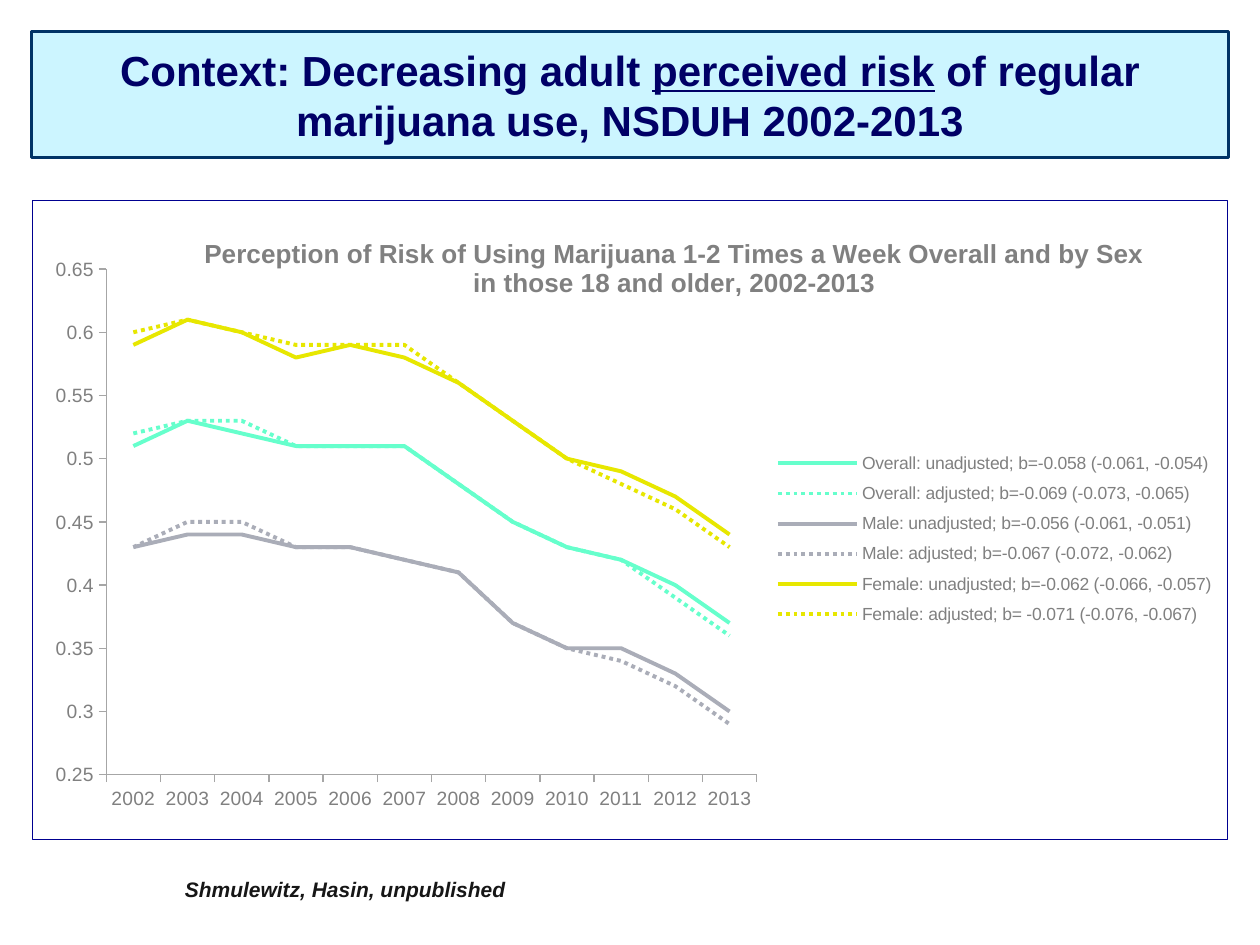
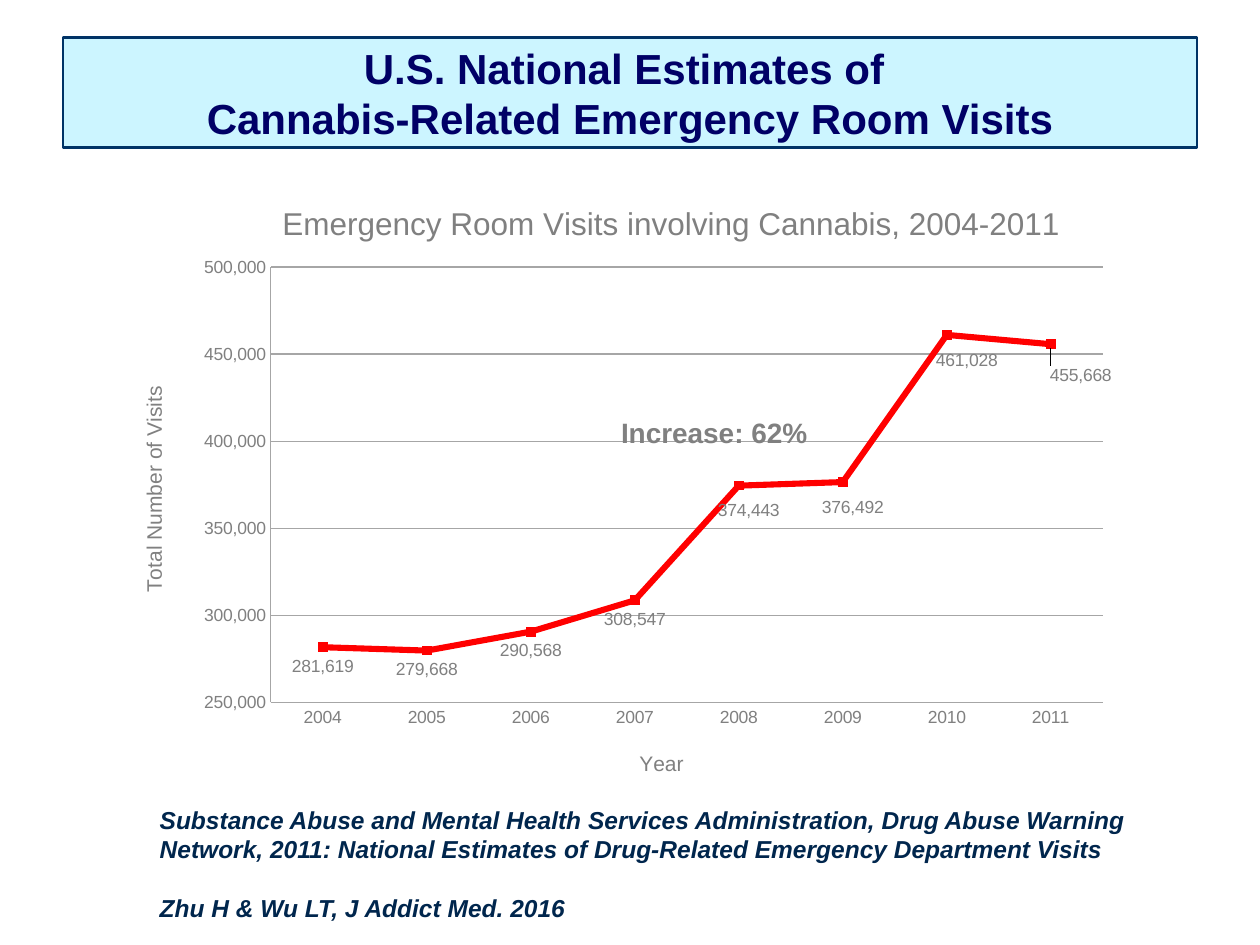
"""Build two slides on cannabis risk perception and emergency room visits."""
from lxml import etree
from pptx import Presentation
from pptx.chart.data import CategoryChartData
from pptx.dml.color import RGBColor
from pptx.enum import chart as ch, dml, text
from pptx.oxml import parse_xml
from pptx.oxml.ns import nsdecls, qn
from pptx.util import Pt

FONT = "Arial"
NAVY, EDGE, BAND = "000066", "003366", "CCF5FF"
GREY, AXIS, WHITE, RED = "808080", "A6A6A6", "FFFFFF", "FF0000"
MINT, STEEL, GOLD = "66FFCC", "AAADB8", "E7E700"

RISK = {
    "head": [("Context: Decreasing adult ", False), ("perceived risk", True),
             (" of regular marijuana use, NSDUH 2002-2013", False)],
    "band": (18, 18, 684, 72),
    "box": (18, 114, 684, 366),
    "title": "Perception of Risk of Using Marijuana 1-2 Times a Week "
             "Overall and by Sex in those 18 and older, 2002-2013",
    "years": range(2002, 2014),
    "lines": [
        ("Overall: unadjusted; b=-0.058 (-0.061, -0.054)", MINT,
         [.51, .53, .52, .51, .51, .51, .48, .45, .43, .42, .40, .37]),
        ("Overall: adjusted; b=-0.069 (-0.073, -0.065)", MINT,
         [.52, .53, .53, .51, .51, .51, .48, .45, .43, .42, .39, .36]),
        ("Male: unadjusted; b=-0.056 (-0.061, -0.051)", STEEL,
         [.43, .44, .44, .43, .43, .42, .41, .37, .35, .35, .33, .30]),
        ("Male: adjusted; b=-0.067 (-0.072, -0.062)", STEEL,
         [.43, .45, .45, .43, .43, .42, .41, .37, .35, .34, .32, .29]),
        ("Female: unadjusted; b=-0.062 (-0.066, -0.057)", GOLD,
         [.59, .61, .60, .58, .59, .58, .56, .53, .50, .49, .47, .44]),
        ("Female: adjusted; b= -0.071 (-0.076, -0.067)", GOLD,
         [.60, .61, .60, .59, .59, .59, .56, .53, .50, .48, .46, .43]),
    ],
    "note": ["Shmulewitz, Hasin, unpublished"],
}
VISITS = {
    "head": [("U.S. National Estimates of \vCannabis-Related Emergency Room Visits",
              False)],
    "band": (36, 21.6, 648, 62.6),
    "box": (72.7, 102.2, 569.5, 352.8),
    "title": "Emergency Room Visits involving Cannabis, 2004-2011",
    "years": range(2004, 2012),
    "lines": [("Series 1", RED, [281619, 279668, 290568, 308547,
                                 374443, 376492, 461028, 455668])],
    "shifts": {4: (.01, .01), 5: (.01, .01), 6: (.02, .01), 7: (.03, .02)},
    "note": ["Substance Abuse and Mental Health Services Administration, "
             "Drug Abuse Warning Network, 2011: National Estimates of "
             "Drug-Related Emergency Department Visits",
             "Zhu H & Wu LT, J Addict Med. 2016"],
    "rise": ["Increase: 62%"],
}


def rgb(code):
    """Turn a hex string into a colour."""
    return RGBColor.from_string(code)


def style(font, size, color, bold=False, slant=False):
    """Format one font."""
    font.name, font.size = FONT, Pt(size)
    font.bold, font.italic = bold, slant
    font.color.rgb = rgb(color)


def stroke(line, color, width):
    """Colour a line and set its width."""
    line.color.rgb = rgb(color)
    line.width = Pt(width)


def head(deck, data):
    """Add a slide with its title band."""
    slide = deck.slides.add_slide(deck.slide_layouts[5])
    band = slide.shapes.title
    band.left, band.top, band.width, band.height = map(Pt, data["band"])
    band.fill.solid()
    band.fill.fore_color.rgb = rgb(BAND)
    stroke(band.line, EDGE, 1.5)
    frame = band.text_frame
    frame.auto_size = text.MSO_AUTO_SIZE.NONE
    frame.vertical_anchor = text.MSO_ANCHOR.MIDDLE
    para = frame.paragraphs[0]
    para.text = data["head"][0][0]
    for words, _ in data["head"][1:]:
        para.add_run().text = words
    para.alignment = text.PP_ALIGN.CENTER
    for run in para.runs:
        style(run.font, 24, NAVY, True)
        run.font.underline = (run.text, True) in data["head"]
    return slide


def label(slide, box, lines, size, color, slant=False, wrap=False, gap=0):
    """Add a bold text box, one paragraph per line."""
    frame = slide.shapes.add_textbox(*map(Pt, box)).text_frame
    frame.word_wrap = wrap
    frame.auto_size = text.MSO_AUTO_SIZE.SHAPE_TO_FIT_TEXT
    frame.text = "\n".join(lines)
    for spot, para in enumerate(frame.paragraphs):
        if spot:
            para.space_before = Pt(gap)
        for run in para.runs:
            style(run.font, size, color, True, slant)


def place(node, slot, inner=False, **sides):
    """Give a chart part a manual layout at a child index."""
    for old in node.findall(qn("c:layout")):
        node.remove(old)
    lay = parse_xml(f"<c:layout {nsdecls('c')}><c:manualLayout/></c:layout>")
    facts = {"layoutTarget": "inner"} if inner else {}
    if node.tag != qn("c:dLbl"):
        facts.update(xMode="edge", yMode="edge")
    for key, val in {**facts, **sides}.items():
        etree.SubElement(lay[0], qn("c:" + key)).set("val", str(val))
    node.insert(slot, lay)


def paint(chart, border=None):
    """Fill the chart area white and draw its border."""
    line = (f'<a:ln w="9525"><a:solidFill><a:srgbClr val="{border}"/></a:solidFill></a:ln>'
            if border else "<a:ln><a:noFill/></a:ln>")
    chart.element.find(qn("c:txPr")).addprevious(parse_xml(
        f"<c:spPr {nsdecls('c', 'a')}><a:solidFill>"
        f'<a:srgbClr val="{WHITE}"/></a:solidFill>{line}</c:spPr>'))


def caption(part, words, size, bold=False):
    """Write a chart or axis title."""
    part.text_frame.text = words
    style(part.text_frame.paragraphs[0].runs[0].font, size, GREY, bold)


def plot(slide, data, kind, size, width, form, span, tick):
    """Add a line chart and style its title, axes and lines."""
    table = CategoryChartData(number_format=form)
    table.categories = [str(year) for year in data["years"]]
    for name, _, vals in data["lines"]:
        table.add_series(name, vals)
    chart = slide.shapes.add_chart(kind, *map(Pt, data["box"]), table).chart
    style(chart.font, size, GREY)
    chart.has_legend = False
    chart.has_title = True
    chart.plots[0].vary_by_categories = False
    axis = chart.value_axis
    axis.minimum_scale, axis.maximum_scale, axis.major_unit = span
    axis.has_major_gridlines = False
    axis.tick_labels.number_format = form
    axis.tick_labels.number_format_is_linked = False
    for side in (axis, chart.category_axis):
        side.major_tick_mark = tick
        side.minor_tick_mark = ch.XL_TICK_MARK.NONE
        stroke(side.format.line, AXIS, .75)
        style(side.tick_labels.font, size, GREY)
    for line, (name, color, _) in zip(chart.plots[0].series, data["lines"]):
        line.smooth = False
        stroke(line.format.line, color, width)
        if ": adjusted" in name:
            line.format.line.dash_style = dml.MSO_LINE.ROUND_DOT
    return chart


def risk(deck):
    """Build the slide on perceived risk."""
    slide = head(deck, RISK)
    chart = plot(slide, RISK, ch.XL_CHART_TYPE.LINE, 11, 2.25, "General",
                 (.25, .65, .05), ch.XL_TICK_MARK.OUTSIDE)
    caption(chart.chart_title, RISK["title"], 14.9, True)
    chart.has_legend = True
    chart.legend.position = ch.XL_LEGEND_POSITION.RIGHT
    chart.legend.include_in_layout = False
    style(chart.legend.font, 10, GREY)
    root = chart.element
    place(next(root.iter(qn("c:title"))), 1, x=.14, y=.05)
    place(next(root.iter(qn("c:legend"))), 1, x=.62, y=.38, w=.37, h=.3)
    place(next(root.iter(qn("c:plotArea"))), 0, True, x=.062, y=.108, w=.544, h=.791)
    paint(chart, "000090")
    label(slide, (98.6, 497.5, 200, 21.6), RISK["note"], 12, "161616", True)


def visits(deck):
    """Build the slide on emergency room visits."""
    slide = head(deck, VISITS)
    label(slide, (84.2, 456.5, 576, 77.8), VISITS["note"], 14, "00264D",
          True, True, 16.8)
    chart = plot(slide, VISITS, ch.XL_CHART_TYPE.LINE_MARKERS, 10, 3.5, "#,##0",
                 (250000, 500000, 50000), ch.XL_TICK_MARK.NONE)
    caption(chart.chart_title, VISITS["title"], 18)
    caption(chart.category_axis.axis_title, "Year", 12)
    caption(chart.value_axis.axis_title, "Total Number of Visits", 12)
    chart.value_axis.has_major_gridlines = True
    stroke(chart.value_axis.major_gridlines.format.line, AXIS, .75)
    line = chart.plots[0].series[0]
    mark = line.marker
    mark.style, mark.size = ch.XL_MARKER_STYLE.SQUARE, 5
    mark.format.fill.solid()
    mark.format.fill.fore_color.rgb = rgb(RED)
    stroke(mark.format.line, RED, .75)
    tags = line.data_labels
    tags.show_value = True
    tags.position = ch.XL_LABEL_POSITION.BELOW
    style(tags.font, 10, GREY)
    for spot in VISITS["shifts"]:
        tag = line.points[spot].data_label
        tag.position = ch.XL_LABEL_POSITION.BELOW
        style(tag.font, 10, GREY)
    root = chart.element
    for node, (x, y) in zip(root.iter(qn("c:dLbl")), VISITS["shifts"].values()):
        place(node, 1, x=x, y=y)
    spots = [(.15, .03), (.51, .92), (.01, .33)]
    for node, (x, y) in zip(root.iter(qn("c:title")), spots):
        place(node, 1, x=x, y=y)
    place(next(root.iter(qn("c:plotArea"))), 0, True, x=.144, y=.143, w=.835, h=.705)
    paint(chart)
    label(slide, (347.8, 234, 122.4, 26.6), VISITS["rise"], 16, GREY)


def main():
    """Build and save the deck."""
    deck = Presentation()
    deck.slide_width, deck.slide_height = Pt(720), Pt(540)
    risk(deck)
    visits(deck)
    deck.save("out.pptx")


if __name__ == "__main__":
    main()
